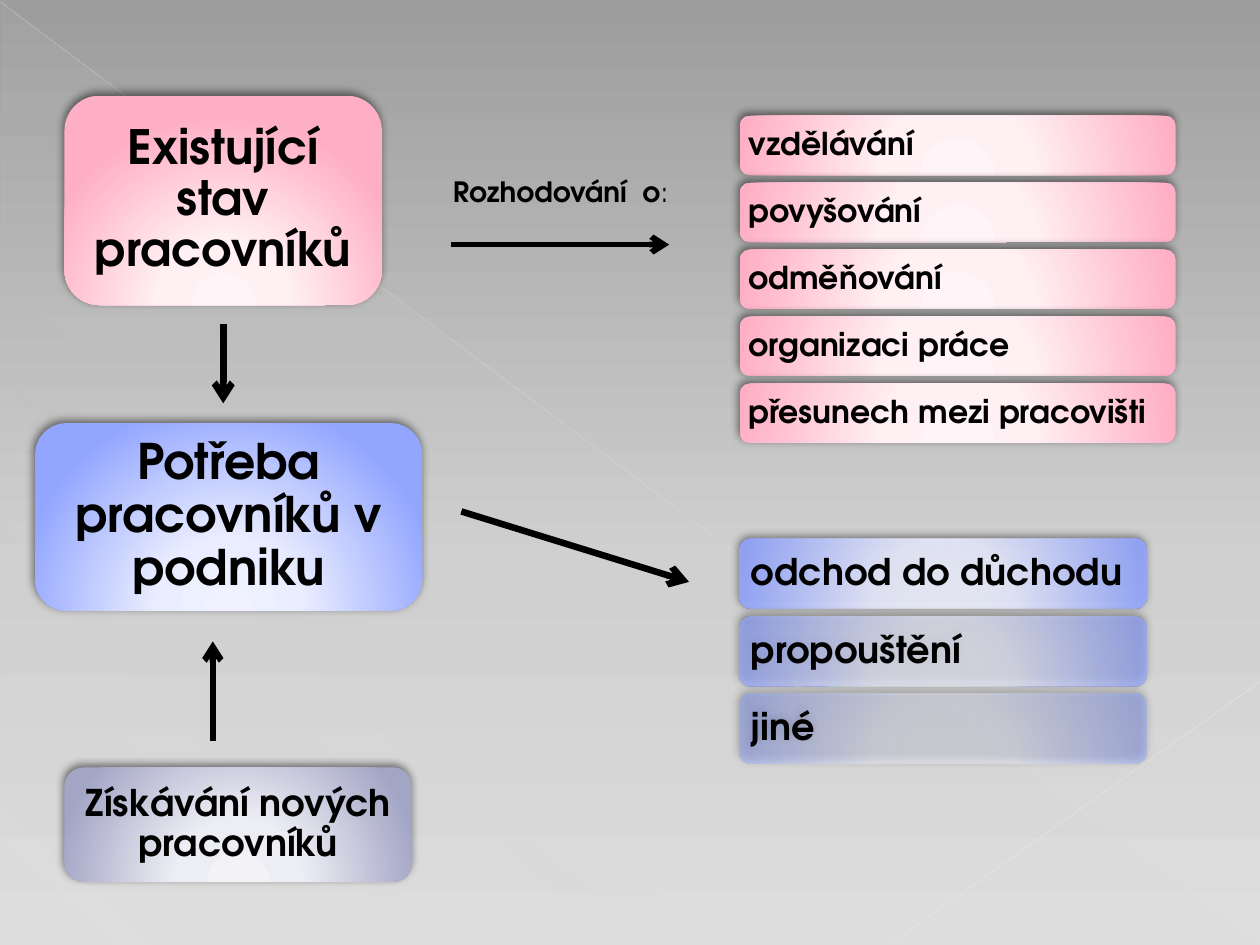
from dataclasses import dataclass
from typing import Optional

from lxml import etree
from pptx import Presentation
from pptx import util as u
from pptx.dml.color import RGBColor
from pptx.enum import shapes, text
from pptx.oxml import ns

FONT = "TeX Gyre Adventor"
CORNER_TEXT_INSET = 0.0488
COLORS = {
    "text": "000000",
    "sky_top": "9D9D9D", "sky_middle": "D0D0D0", "sky_bottom": "DEDEDE",
    "veil": "D2D2D2", "long_ray": "EBEBEB", "short_ray": "EDEDED",
    "pink_light": "FFF4F7", "pink_mid": "FFF0F3", "pink": "FFAFC5",
    "blue_light": "F0F2FF", "blue_mid": "EAEDFF", "blue": "92A5FF",
    "grey_light": "F2F2F7", "grey_mid": "EDEEF4", "grey": "A3A5C5",
}


@dataclass
class Stop:
    position: int
    color: str
    opacity: int = 100


@dataclass
class Box:
    words: str
    left: float
    top: float
    width: float
    height: float
    color: str
    size: int
    inset: float
    centered: bool = True
    opacity: int = 100


@dataclass
class Line:
    start: tuple[float, float]
    end: tuple[float, float]
    width: float
    color: str = "text"
    opacity: int = 100
    arrow: bool = True


@dataclass
class RowList:
    rows: list[str]
    top: float
    pitch: float
    width: float
    height: float
    color: str
    size: int
    inset: float
    opacities: list[int]

    def boxes(self) -> list[Box]:
        return [
            Box(words, 14.91, self.top + index * self.pitch, self.width, self.height,
                self.color, self.size, self.inset, False, opacity)
            for index, (words, opacity) in enumerate(zip(self.rows, self.opacities))
        ]


MAIN_BOXES = [
    Box("Existující stav pracovníků", 1.3, 1.93, 6.4, 4.22, "pink", 27, 0.28),
    Box("Potřeba pracovníků v podniku", 0.71, 8.53, 7.8, 3.78, "blue", 28, 0.3),
    Box("Získávání nových pracovníků", 1.3, 15.47, 7.01, 2.31, "grey", 21, 0.23),
]
ROW_LISTS = [
    RowList(["vzdělávání", "povyšování", "odměňování", "organizaci práce",
             "přesunech mezi pracovišti"],
            2.33, 1.35, 8.79, 1.2, "pink", 18, 0.18, [100] * 5),
    RowList(["odchod do důchodu", "propouštění", "jiné"],
            10.87, 1.56, 8.2, 1.4, "blue", 21, 0.23, [90, 70, 50]),
]
RAYS = [
    Line((0, 0.03), (25.37, 19.02), 0.39, "long_ray", 35, False),
    Line((25.4, 13.74), (17.96, 19.02), 0.47, "short_ray", 45, False),
]
ARROWS = [
    Line((9.09, 4.93), (13.49, 4.93), 3.25),
    Line((4.5, 6.53), (4.5, 8.13), 3.75),
    Line((9.3, 10.31), (13.89, 11.73), 3.75),
    Line((4.29, 14.94), (4.29, 12.93), 3.5),
]


def add_element(parent, tag: str, **attributes):
    values = {name: str(value) for name, value in attributes.items()}
    return etree.SubElement(parent, ns.qn(tag), values)


def add_color(parent, color: str, opacity: int) -> None:
    element = add_element(parent, "a:srgbClr", val=COLORS[color])
    if opacity < 100:
        add_element(element, "a:alpha", val=opacity * 1000)


def set_gradient(fill, properties, stops: list[Stop], angle: Optional[int] = None) -> None:
    fill.solid()
    gradient = etree.Element(ns.qn("a:gradFill"), {"rotWithShape": "1"})
    stop_list = add_element(gradient, "a:gsLst")
    for stop in stops:
        element = add_element(stop_list, "a:gs", pos=stop.position * 1000)
        add_color(element, stop.color, stop.opacity)
    if angle is None:
        circle = add_element(gradient, "a:path", path="circle")
        add_element(circle, "a:fillToRect", l=50000, t=155000, r=50000, b=-55000)
    else:
        add_element(gradient, "a:lin", ang=angle * 60000, scaled=0)
    properties.replace(properties.find(ns.qn("a:solidFill")), gradient)


def add_run(paragraph, words: str, size: int, bold: bool = True) -> None:
    run = paragraph.add_run()
    run.text = words
    run.font.name = FONT
    run.font.size = u.Pt(size)
    run.font.bold = bold
    run.font.color.rgb = RGBColor.from_string(COLORS["text"])


def add_box(slide, box: Box) -> None:
    shape = slide.shapes.add_shape(
        shapes.MSO_SHAPE.ROUNDED_RECTANGLE,
        u.Cm(box.left), u.Cm(box.top), u.Cm(box.width), u.Cm(box.height))
    properties = shape.element.spPr
    stops = [Stop(position, box.color + suffix, box.opacity)
             for position, suffix in ((0, "_light"), (34, "_mid"), (100, ""))]
    set_gradient(shape.fill, properties, stops)
    shape.line.fill.background()
    shape.shadow.inherit = False
    shadow = add_element(properties.find(ns.qn("a:effectLst")), "a:outerShdw",
                         blurRad=u.Pt(5), dist=u.Pt(2), dir=245 * 60000, rotWithShape=0)
    add_color(shadow, "text", 50)

    frame = shape.text_frame
    frame.word_wrap = True
    frame.vertical_anchor = text.MSO_ANCHOR.MIDDLE
    margin = u.Cm(box.inset - box.height * CORNER_TEXT_INSET)
    frame.margin_left = frame.margin_right = margin
    frame.margin_top = frame.margin_bottom = margin
    paragraph = frame.paragraphs[0]
    paragraph.alignment = text.PP_ALIGN.CENTER if box.centered else text.PP_ALIGN.LEFT
    paragraph.line_spacing = 0.9
    add_run(paragraph, box.words, box.size)


def add_line(slide, line: Line) -> None:
    connector = slide.shapes.add_connector(
        shapes.MSO_CONNECTOR.STRAIGHT, *(u.Cm(value) for value in line.start + line.end))
    connector.line.width = u.Pt(line.width)
    connector.line.fill.solid()
    properties = connector.element.spPr
    outline = properties.find(ns.qn("a:ln"))
    add_color(outline.find(ns.qn("a:solidFill")), line.color, line.opacity)
    if line.arrow:
        add_element(outline, "a:tailEnd", type="arrow")
    add_element(properties, "a:effectLst")


def add_backdrop(slide) -> None:
    fill = slide.background.fill
    fill.solid()
    set_gradient(fill, slide.element.find(".//" + ns.qn("p:bgPr")),
                 [Stop(0, "sky_top"), Stop(60, "sky_middle"), Stop(100, "sky_bottom")], 90)
    veil = slide.shapes.add_shape(shapes.MSO_SHAPE.RIGHT_TRIANGLE,
                                  u.Cm(0.03), u.Cm(0.05), u.Cm(25.35), u.Cm(19))
    set_gradient(veil.fill, veil.element.spPr,
                 [Stop(0, "veil", 10), Stop(70, "veil", 8), Stop(100, "veil", 1)], 133)
    veil.line.fill.background()
    veil.shadow.inherit = False
    for ray in RAYS:
        add_line(slide, ray)


def add_decision_label(slide) -> None:
    label = slide.shapes.add_textbox(u.Cm(8.88), u.Cm(3.4), u.Cm(6.2), u.Cm(1))
    label.text_frame.word_wrap = True
    paragraph = label.text_frame.paragraphs[0]
    add_run(paragraph, "Rozhodování  o", 16)
    add_run(paragraph, ":", 16, bold=False)


def main() -> None:
    presentation = Presentation()
    presentation.slide_width, presentation.slide_height = u.Cm(25.4), u.Cm(19.05)
    slide = presentation.slides.add_slide(presentation.slide_layouts[6])
    add_backdrop(slide)
    for box in MAIN_BOXES + [row for rows in ROW_LISTS for row in rows.boxes()]:
        add_box(slide, box)
    for arrow in ARROWS:
        add_line(slide, arrow)
    add_decision_label(slide)
    presentation.save("out.pptx")


if __name__ == "__main__":
    main()
